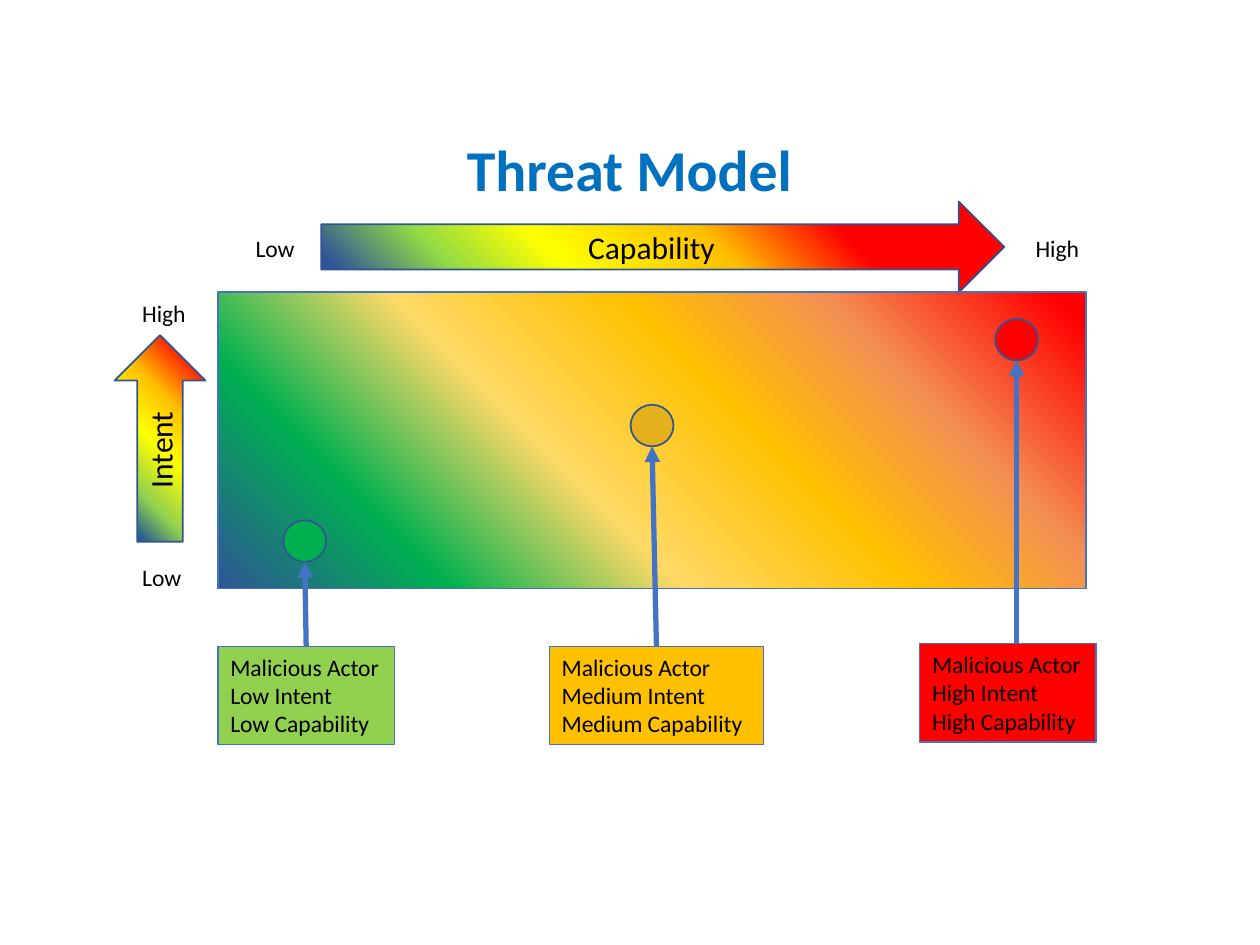
from dataclasses import dataclass

from lxml.etree import SubElement
from pptx import Presentation
from pptx.dml.color import RGBColor
from pptx.enum.shapes import MSO_CONNECTOR, MSO_SHAPE
from pptx.enum.text import MSO_ANCHOR, MSO_AUTO_SIZE, PP_ALIGN
from pptx.oxml import parse_xml
from pptx.oxml.ns import nsdecls, qn
from pptx.util import Inches, Pt

CELL = 0.1  # the slide is a grid of 100 columns by 75 rows
COLORS = {
    "title": "0070C0", "text": "000000", "blue": "4472C4", "edge": "325491",
    "low_dot": "00B050", "medium_dot": "E4B01C",
    "low": "92D050", "medium": "FFC000", "high": "FF0000",
}
INTENT_STOPS = [(10, "FF0000"), (34, "FFC000"), (53, "FFFF00"),
                (75, "92D050"), (90, "255E91")]
CAPABILITY_STOPS = [(25, "FF0000"), (43, "FFC000"), (65, "FFFF00"),
                    (80, "92DA46"), (95, "2F5597")]
FIELD_STOPS = [(3, "FF0000"), (23, "F39053"), (40, "FFC000"),
               (60, "FFD966"), (80, "00B050"), (100, "2F5597")]
FROM_TOP_RIGHT = '<a:path path="circle"><a:fillToRect l="100000" b="100000"/></a:path>'
DIAGONAL = '<a:lin ang="8100000" scaled="0"/>'


@dataclass
class Box:
    """An area measured in grid columns and rows."""
    left: float
    top: float
    width: float
    height: float

    def inner(self, left, top, width, height):
        return Box(self.left + left, self.top + top, width, height)

    def emu(self):
        return [grid(n) for n in (self.left, self.top, self.width, self.height)]


def grid(cells):
    return Inches(cells * CELL)


def color(name):
    return RGBColor.from_string(COLORS[name])


def write(shape, lines, size=13.5, ink="text", bold=False, align=PP_ALIGN.LEFT):
    frame = shape.text_frame
    for index, line in enumerate(lines):
        para = frame.paragraphs[0] if index == 0 else frame.add_paragraph()
        para.alignment = align
        span = para.add_run()
        span.text = line
        span.font.name = "Calibri"
        span.font.size = Pt(size)
        span.font.bold = bold
        span.font.color.rgb = color(ink)
    return frame


def fit(frame):
    frame.word_wrap = False
    frame.auto_size = MSO_AUTO_SIZE.SHAPE_TO_FIT_TEXT


def add_label(page, box, text, **style):
    frame = write(page.shapes.add_textbox(*box.emu()), [text], **style)
    fit(frame)
    return frame


def add_figure(page, kind, box, edge, weight=1, fill=None):
    shape = page.shapes.add_shape(kind, *box.emu())
    shape.shadow.inherit = False
    shape.line.color.rgb = color(edge)
    shape.line.width = Pt(weight)
    if fill:
        shape.fill.solid()
        shape.fill.fore_color.rgb = color(fill)
    return shape


def shade(shape, stops, direction):
    marks = "".join(f'<a:gs pos="{at * 1000}"><a:srgbClr val="{tone}"/></a:gs>'
                    for at, tone in stops)
    shape.element.spPr.find(qn("a:prstGeom")).addnext(parse_xml(
        f'<a:gradFill {nsdecls("a")} rotWithShape="1">'
        f'<a:gsLst>{marks}</a:gsLst>{direction}</a:gradFill>'))


def add_axis(page, box, name, stops, upright=False):
    """An arrow with its Low and High ends labelled."""
    if upright:
        low, high = box.inner(1.2, 21, 5.1, 3.3), box.inner(1.2, 0, 5.5, 3.3)
        length = 16.4
        arrow_box = box.inner((box.width - length) / 2, 8, length, box.width)
    else:
        low = box.inner(0, 2.1, 5.1, 3.3)
        high = box.inner(box.width - 5.5, 2.1, 5.5, 3.3)
        arrow_box = box.inner(6.2, 0, 54.2, box.height)
    arrow = add_figure(page, MSO_SHAPE.RIGHT_ARROW, arrow_box, "edge")
    arrow.rotation = 270 if upright else 0
    shade(arrow, stops, FROM_TOP_RIGHT)
    frame = write(arrow, [name], size=18, align=PP_ALIGN.CENTER)
    frame.vertical_anchor = MSO_ANCHOR.MIDDLE
    add_label(page, low, "Low")
    add_label(page, high, "High")


def add_field(page, box, dots):
    """The graded field, with a dot at each share of its width and height."""
    shade(add_figure(page, MSO_SHAPE.RECTANGLE, box, "blue"), FIELD_STOPS, DIAGONAL)
    width, height = 3.4, 3.3
    return [add_figure(page, MSO_SHAPE.OVAL,
                       box.inner(x * box.width - width / 2,
                                 y * box.height - height / 2, width, height),
                       "edge", fill=fill)
            for x, y, fill in dots]


def add_actor(page, box, level):
    card = add_figure(page, MSO_SHAPE.RECTANGLE, box, "blue", 0.75, level.lower())
    frame = write(card, ["Malicious Actor", f"{level} Intent", f"{level} Capability"])
    frame.vertical_anchor = MSO_ANCHOR.TOP
    fit(frame)
    return card


def point_to(page, card, dot, upright=False):
    """An arrow from a card's top edge to the bottom of its dot."""
    x, y = dot.left + dot.width // 2, dot.top + dot.height
    link = page.shapes.add_connector(MSO_CONNECTOR.STRAIGHT, x, card.top, x, y)
    if not upright:
        link.begin_connect(card, 0)
    link.line.color.rgb = color("blue")
    link.line.width = Pt(3)
    outline = link.element.spPr.find(qn("a:ln"))
    SubElement(outline, qn("a:tailEnd"), type="triangle")
    SubElement(link.element.spPr, qn("a:effectLst"))


def add_title(page, box):
    frame = add_label(page, box, " Threat Model", size=33, ink="title",
                      bold=True, align=PP_ALIGN.CENTER)
    frame.margin_left = frame.margin_right = Inches(0.07)
    frame.margin_top = frame.margin_bottom = Inches(0.04)


def main():
    deck = Presentation()
    deck.slide_width, deck.slide_height = grid(100), grid(75)
    page = deck.slides.add_slide(deck.slide_layouts[6])

    # Axes
    add_axis(page, Box(9.1, 23.2, 7.2, 24.3), "Intent", INTENT_STOPS, upright=True)
    add_axis(page, Box(19.3, 16, 67.4, 7.2), "Capability", CAPABILITY_STOPS)

    # Field and its dots
    dots = add_field(page, Box(17.3, 23.2, 68.9, 23.5), [
        (0.1, 0.84, "low_dot"), (0.5, 0.45, "medium_dot"), (0.92, 0.16, "high")])

    # Actors and their arrows
    cards = [add_actor(page, Box(left, top, width, 7.8), level)
             for left, top, width, level in [(17.3, 51.3, 14, "Low"),
                                             (43.6, 51.3, 17, "Medium"),
                                             (73, 51.1, 14, "High")]]
    for card, dot in zip(cards, dots):
        point_to(page, card, dot, upright=card is cards[-1])

    add_title(page, Box(35.1, 10.2, 28.7, 6.3))
    deck.save("out.pptx")


if __name__ == "__main__":
    main()
